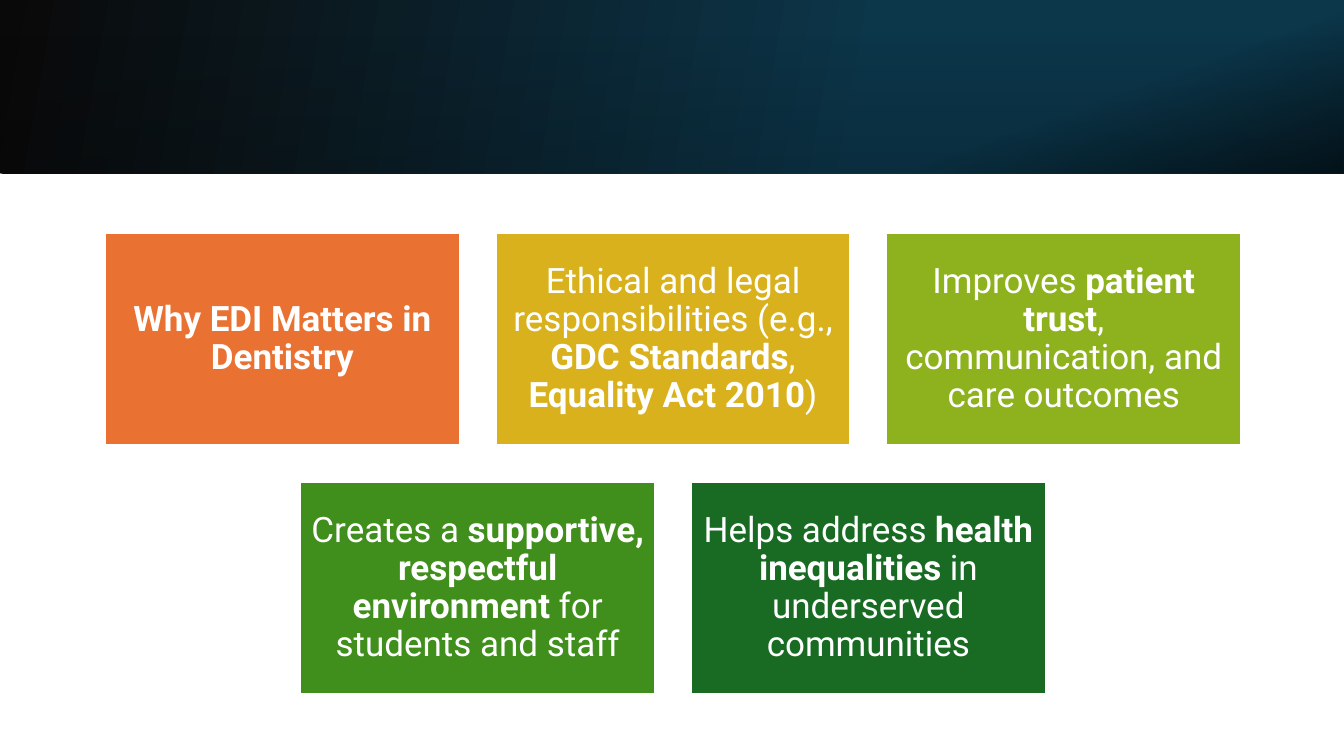
from dataclasses import dataclass

from lxml import etree
from pptx import Presentation
from pptx.dml.color import RGBColor
from pptx.enum.shapes import MSO_SHAPE
from pptx.enum.text import MSO_ANCHOR, MSO_AUTO_SIZE, PP_ALIGN
from pptx.oxml.ns import qn
from pptx.util import Inches, Pt

RECTANGLE = MSO_SHAPE.RECTANGLE
MIDDLE = MSO_ANCHOR.MIDDLE
NO_AUTOFIT = MSO_AUTO_SIZE.NONE
CENTER = PP_ALIGN.CENTER
TITLE_ONLY_LAYOUT = 5

SLIDE_WIDTH, SLIDE_HEIGHT = 13.33, 7.5
BAND_HEIGHT = 1.72
CARD_WIDTH, CARD_HEIGHT = 3.52, 2.11
COLUMN_STEP, ROW_STEP = 3.875, 2.47
GRID_LEFT, GRID_TOP = 1.04, 2.31
COLUMNS = 3


@dataclass(frozen=True)
class Theme:
    font: str = "Roboto"
    text_size: float = 25
    outline_width: float = 1.5
    white: str = "FFFFFF"
    black: str = "000000"
    band_start: str = "0A0909"
    band_end: str = "0C364A"
    cards: tuple = ("E97132", "D8B11D", "8EB21E", "408E1C", "196B24")


CARD_TEXTS = [
    [("Why EDI Matters in Dentistry", True)],
    [("Ethical and legal responsibilities (e.g., ", False), ("GDC Standards", True),
     (", ", False), ("Equality Act 2010", True), (")", False)],
    [("Improves ", False), ("patient trust", True),
     (", communication, and care outcomes", False)],
    [("Creates a ", False), ("supportive, respectful environment", True),
     (" for students and staff", False)],
    [("Helps address ", False), ("health inequalities", True),
     (" in underserved communities", False)],
]


class SlideBuilder:
    """Draws the elements of one slide in a given theme."""

    def __init__(self, slide, theme):
        self.slide = slide
        self.theme = theme

    def rectangle(self, left, top, width, height):
        shape = self.slide.shapes.add_shape(
            RECTANGLE, Inches(left), Inches(top), Inches(width), Inches(height))
        shape.shadow.inherit = False
        return shape

    def gradient_band(self, left, width, angle, stops):
        shape = self.rectangle(left, 0, width, BAND_HEIGHT)
        shape.line.fill.background()
        shape.fill.gradient()
        shape.fill.gradient_angle = 360 - angle
        for stop, (position, color, _) in zip(shape.fill.gradient_stops, stops):
            stop.position = position
            stop.color.rgb = RGBColor.from_string(color)
        colors = shape._element.spPr.iter(qn("a:srgbClr"))
        for color, (_, _, opacity) in zip(colors, stops):
            if opacity < 100:
                etree.SubElement(color, qn("a:alpha"), val=str(opacity * 1000))

    def title_card(self, left, top, fill, pieces):
        title = self.slide.shapes.title
        title.left, title.top = Inches(left), Inches(top)
        title.width, title.height = Inches(CARD_WIDTH), Inches(CARD_HEIGHT)
        self.format_card(title, fill, pieces)

    def card(self, left, top, fill, pieces):
        shape = self.rectangle(left, top, CARD_WIDTH, CARD_HEIGHT)
        self.format_card(shape, fill, pieces)

    def format_card(self, shape, fill, pieces):
        shape.fill.solid()
        shape.fill.fore_color.rgb = RGBColor.from_string(fill)
        shape.line.color.rgb = RGBColor.from_string(self.theme.white)
        shape.line.width = Pt(self.theme.outline_width)
        frame = shape.text_frame
        frame.word_wrap = True
        frame.auto_size = NO_AUTOFIT
        frame.vertical_anchor = MIDDLE
        frame.margin_left = frame.margin_right = Inches(0.1)
        frame.margin_top = frame.margin_bottom = Inches(0.1)
        paragraph = frame.paragraphs[0]
        paragraph.alignment = CENTER
        paragraph.line_spacing = 0.9
        for text, bold in pieces:
            run = paragraph.add_run()
            run.text = text
            run.font.name = self.theme.font
            run.font.size = Pt(self.theme.text_size)
            run.font.bold = bold
            run.font.color.rgb = RGBColor.from_string(self.theme.white)


def main():
    presentation = Presentation()
    presentation.slide_width = Inches(SLIDE_WIDTH)
    presentation.slide_height = Inches(SLIDE_HEIGHT)
    layout = presentation.slide_layouts[TITLE_ONLY_LAYOUT]
    theme = Theme()
    builder = SlideBuilder(presentation.slides.add_slide(layout), theme)

    third = SLIDE_WIDTH / 3
    builder.gradient_band(0, SLIDE_WIDTH, 10,
                          [(0, theme.band_start, 100), (0.65, theme.band_end, 100)])
    builder.gradient_band(2 * third, third, 70,
                          [(0.52, theme.black, 0), (1, theme.black, 60)])
    builder.gradient_band(0, SLIDE_WIDTH, 90,
                          [(0.2, theme.black, 0), (1, theme.black, 15)])

    for index, (fill, pieces) in enumerate(zip(theme.cards, CARD_TEXTS)):
        row, column = divmod(index, COLUMNS)
        left = GRID_LEFT + (column + row / 2) * COLUMN_STEP
        top = GRID_TOP + row * ROW_STEP
        draw = builder.card if index else builder.title_card
        draw(left, top, fill, pieces)

    presentation.save("out.pptx")


if __name__ == "__main__":
    main()
